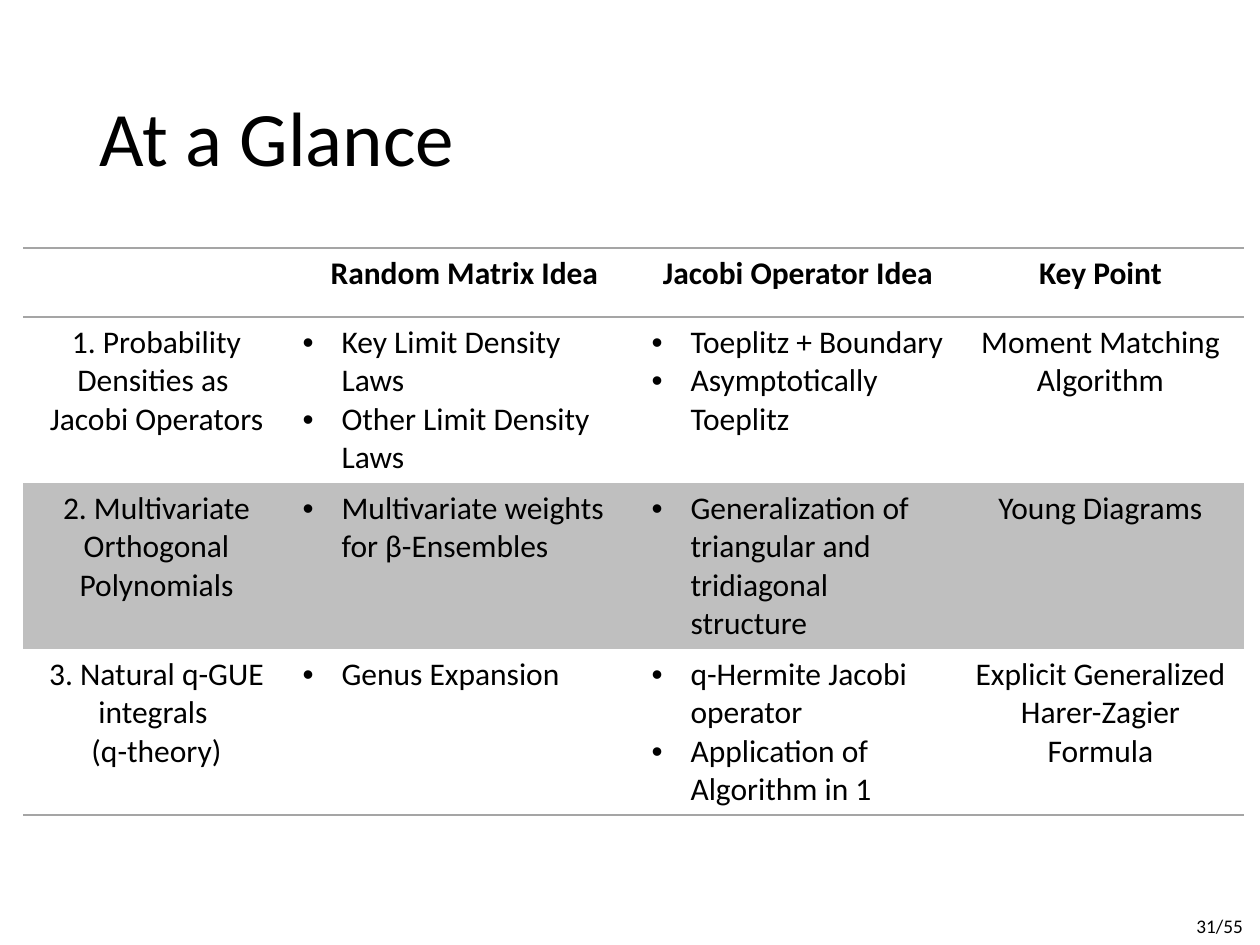
import dataclasses

import lxml.etree
import pptx
import pptx.dml.color
import pptx.enum.text
import pptx.oxml.ns
import pptx.util

ALIGN = pptx.enum.text.PP_ALIGN
PX = 914400 / 126
NO_GRID_STYLE = "{2D5ABB26-0587-4C30-8999-92F81FD0307C}"


@dataclasses.dataclass(frozen=True)
class Theme:
    """Hold the colours, font and type sizes of the slide."""
    font: str = "Calibri"
    ink: str = "000000"
    paper: str = "FFFFFF"
    band: str = "BFBFBF"
    rule: str = "A5A5A5"
    title: int = 44
    table: int = 18
    number: int = 11


THEME = Theme()
HEADINGS = ["", "Random Matrix Idea", "Jacobi Operator Idea", "Key Point"]
TOPICS = [
    [["1. Probability Densities as ", "Jacobi Operators"],
     ["Key Limit Density Laws", "Other Limit Density Laws"],
     ["Toeplitz + Boundary", "Asymptotically Toeplitz"],
     ["Moment Matching Algorithm"]],
    [["2. Multivariate Orthogonal Polynomials"],
     ["Multivariate weights for β-Ensembles"],
     ["Generalization of triangular and tridiagonal structure"],
     ["Young Diagrams"]],
    [["3. Natural q-GUE integrals ", "(q-theory)"],
     ["Genus Expansion"],
     ["q-Hermite Jacobi operator", "Application of Algorithm in 1"],
     ["Explicit Generalized Harer-Zagier Formula"]],
]
BULLET_COLUMNS = (1, 2)


def px(length):
    """Turn whole pixels into EMU."""
    return pptx.util.Emu(round(length * PX))


def color(code):
    """Turn a hex code into a colour."""
    return pptx.dml.color.RGBColor.from_string(code)


def add_element(parent, tag, **attributes):
    """Append a DrawingML element to its parent."""
    return lxml.etree.SubElement(parent, pptx.oxml.ns.qn(tag), attributes)


def write(frame, lines, size, bold=False, align=ALIGN.LEFT, bullet=False, spacing=None):
    """Write lines as formatted paragraphs in a text frame."""
    for index, line in enumerate(lines):
        para = frame.add_paragraph() if index else frame.paragraphs[0]
        para.alignment = align
        if spacing:
            para.line_spacing = spacing
        if bullet:
            props = para._p.get_or_add_pPr()
            props.set("marL", str(px(39)))
            props.set("indent", str(px(-39)))
            add_element(props, "a:buFont", typeface="Arial")
            add_element(props, "a:buChar", char="•")
        span = para.add_run()
        span.text = line
        span.font.name = THEME.font
        span.font.size = pptx.util.Pt(size)
        span.font.bold = bold
        span.font.color.rgb = color(THEME.ink)


def add_rules(cell, sides):
    """Draw thin rules on the given sides of a cell, T before B."""
    props = cell._tc.get_or_add_tcPr()
    for index, side in enumerate(sides):
        line = add_element(props, f"a:ln{side}", w=str(pptx.util.Pt(1)))
        fill = add_element(line, "a:solidFill")
        add_element(fill, "a:srgbClr", val=THEME.rule)
        props.insert(index, line)


def add_title(page, left, top, width, height):
    """Place the slide title."""
    box = page.shapes.title
    box.left, box.top, box.width, box.height = map(px, (left, top, width, height))
    box.text_frame.vertical_anchor = pptx.enum.text.MSO_ANCHOR.MIDDLE
    write(box.text_frame, ["At a Glance"], THEME.title, spacing=0.9)


def add_overview(page, left, top, columns, rows):
    """Place the table of topics, ideas and key points."""
    box = page.shapes.add_table(len(rows), len(columns), px(left), px(top),
                                px(sum(columns)), px(sum(rows)))
    table = box.table
    table.first_row = table.horz_banding = False
    table._tbl.tblPr.find(pptx.oxml.ns.qn("a:tableStyleId")).text = NO_GRID_STYLE
    for column, width in zip(table.columns, columns):
        column.width = px(width)
    for row, height in zip(table.rows, rows):
        row.height = px(height)

    for column, heading in enumerate(HEADINGS):
        cell = table.cell(0, column)
        cell.fill.background()
        add_rules(cell, "TB")
        if heading:
            write(cell.text_frame, [heading], THEME.table, bold=True, align=ALIGN.CENTER)

    for row, topic in enumerate(TOPICS, 1):
        for column, lines in enumerate(topic):
            cell = table.cell(row, column)
            cell.fill.solid()
            cell.fill.fore_color.rgb = color(THEME.paper if row % 2 else THEME.band)
            if row == len(TOPICS):
                add_rules(cell, "B")
            bullet = column in BULLET_COLUMNS
            write(cell.text_frame, lines, THEME.table, bullet=bullet,
                  align=ALIGN.LEFT if bullet else ALIGN.CENTER)


def add_page_number(page, left, top, width, height):
    """Place the page count in the corner."""
    box = page.shapes.add_textbox(*map(px, (left, top, width, height)))
    box.text_frame.word_wrap = False
    write(box.text_frame, ["31/55"], THEME.number)


def main():
    """Build and save the deck."""
    deck = pptx.Presentation()
    deck.slide_width, deck.slide_height = px(1260), px(945)
    page = deck.slides.add_slide(deck.slide_layouts[5])
    add_page_number(page, 1184, 908, 76, 37)
    add_title(page, 87, 50, 1086, 183)
    add_overview(page, 23, 248, columns=(267, 349, 318, 287), rows=(69, 166, 166, 166))
    deck.save("out.pptx")


if __name__ == "__main__":
    main()
